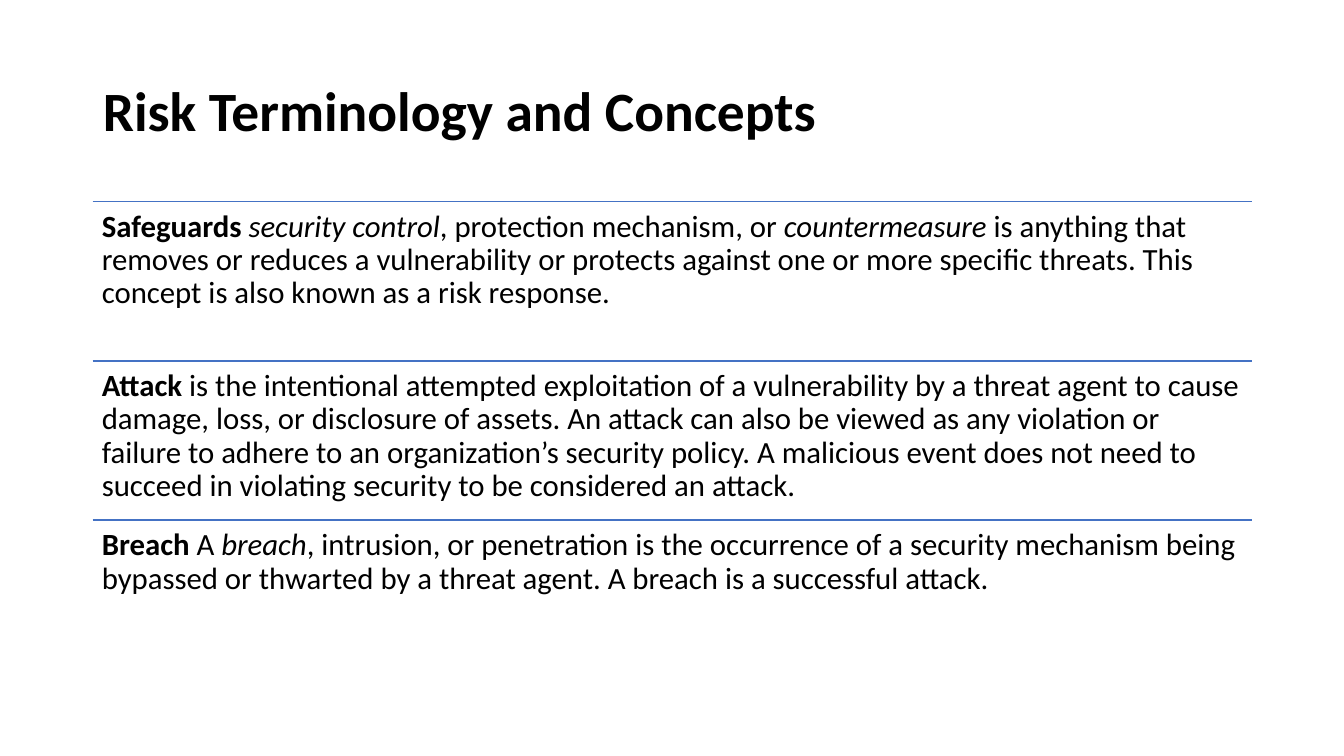
"""Builds a slide that defines three risk terms between ruled lines."""
from lxml import etree
from pptx import Presentation
from pptx.dml.color import RGBColor
from pptx.enum.shapes import MSO_CONNECTOR
from pptx.enum.text import MSO_ANCHOR, MSO_AUTO_SIZE, PP_ALIGN
from pptx.oxml.ns import qn
from pptx.util import Inches, Pt

STRAIGHT = MSO_CONNECTOR.STRAIGHT
MIDDLE, TOP = MSO_ANCHOR.MIDDLE, MSO_ANCHOR.TOP
NO_AUTOFIT = MSO_AUTO_SIZE.NONE
ALIGN_LEFT = PP_ALIGN.LEFT

COLORS = {"text": "000000", "rule": "4472C4"}
FONT = "Calibri"
LEFT, WIDTH = 0.92, 11.5
FIRST_TOP, ROW_HEIGHT = 2, 1.58
INSET = 0.09

DEFINITIONS = [
    [
        ("Safeguards ", "bold"),
        ("security control", "italic"),
        (", protection mechanism, or ", "plain"),
        ("countermeasure ", "italic"),
        ("is anything that removes or reduces a vulnerability or protects "
         "against one or more specific threats. This concept is also known "
         "as a risk response.", "plain"),
    ],
    [
        ("Attack ", "bold"),
        ("is the intentional attempted exploitation of a vulnerability by a "
         "threat agent to cause damage, loss, or disclosure of assets. An "
         "attack can also be viewed as any violation or failure to adhere to "
         "an organization’s security policy. A malicious event does not need "
         "to succeed in violating security to be considered an attack.",
         "plain"),
    ],
    [
        ("Breach ", "bold"),
        ("A ", "plain"),
        ("breach", "italic"),
        (", intrusion, or penetration is the occurrence of a security "
         "mechanism being bypassed or thwarted by a threat agent. A breach "
         "is a successful attack.", "plain"),
    ],
]


def format_paragraph(paragraph, size):
    paragraph.alignment = ALIGN_LEFT
    paragraph.line_spacing = 0.9
    paragraph.font.name = FONT
    paragraph.font.size = Pt(size)
    paragraph.font.color.rgb = RGBColor.from_string(COLORS["text"])


def set_title(slide, text):
    title = slide.shapes.title
    title.left, title.top = Inches(LEFT), Inches(0.4)
    title.width, title.height = Inches(WIDTH), Inches(1.45)
    frame = title.text_frame
    frame.text = text
    frame.word_wrap = True
    frame.auto_size = NO_AUTOFIT
    frame.vertical_anchor = MIDDLE
    format_paragraph(frame.paragraphs[0], 39.6)
    frame.paragraphs[0].font.bold = True


def add_rule(slide, top):
    rule = slide.shapes.add_connector(
        STRAIGHT, Inches(LEFT), Inches(top), Inches(LEFT + WIDTH), Inches(top))
    rule.line.color.rgb = RGBColor.from_string(COLORS["rule"])
    rule.line.width = Pt(1)
    etree.SubElement(rule._element.spPr, qn("a:effectLst"))


def add_definition(slide, top, parts):
    box = slide.shapes.add_textbox(
        Inches(LEFT), Inches(top), Inches(WIDTH), Inches(ROW_HEIGHT))
    frame = box.text_frame
    frame.word_wrap = True
    frame.vertical_anchor = TOP
    frame.margin_left = frame.margin_right = Inches(INSET)
    frame.margin_top = frame.margin_bottom = Inches(INSET)
    paragraph = frame.paragraphs[0]
    format_paragraph(paragraph, 22)
    for text, style in parts:
        run = paragraph.add_run()
        run.text = text
        if style == "bold":
            run.font.bold = True
        elif style == "italic":
            run.font.italic = True


def main():
    presentation = Presentation()
    presentation.slide_width = Inches(13.33)
    presentation.slide_height = Inches(7.5)
    slide = presentation.slides.add_slide(presentation.slide_layouts[5])
    set_title(slide, "Risk Terminology and Concepts")
    for index, parts in enumerate(DEFINITIONS):
        top = FIRST_TOP + index * ROW_HEIGHT
        add_rule(slide, top)
        add_definition(slide, top, parts)
    presentation.save("out.pptx")


if __name__ == "__main__":
    main()
